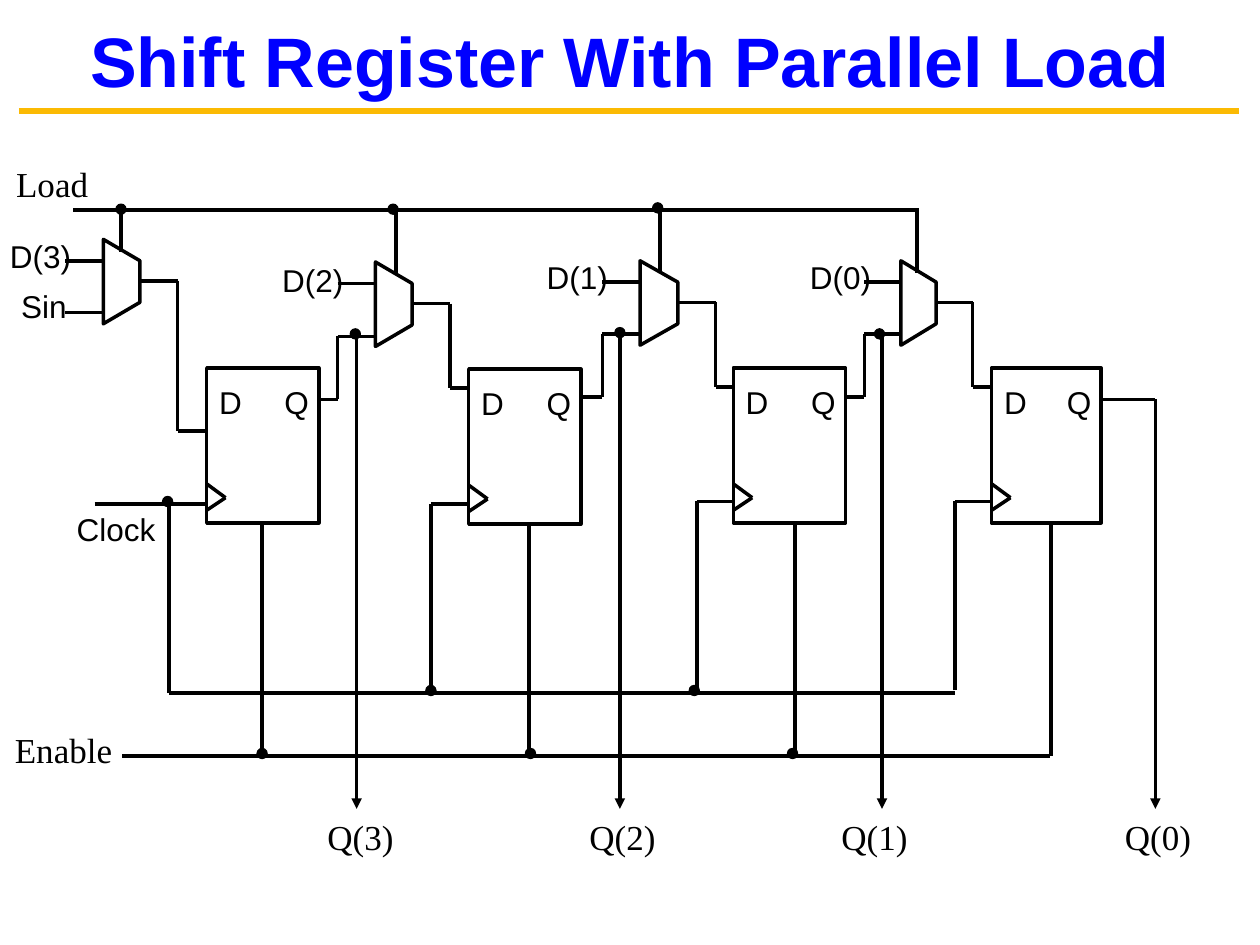
from lxml import etree
from pptx import Presentation
from pptx.dml.color import RGBColor
from pptx.enum import shapes, text
from pptx.oxml.ns import qn
from pptx.util import Pt

PX = 9144  # 100 px to the inch
BLACK, BLUE, GOLD = "000000", "0000FF", "FBBA03"
SANS, SERIF = "Arial", "Times New Roman"
THIN, THICK = 2, 2.25

# One dict per stage: multiplexer, flip-flop, and the wires around them
STAGES = [
    dict(mux=(82, 190, 29), flop=(164, 292, 89), bend=(141, 342), inlet=52,
         clock=(134, 400, 550), enable=208, load=96, name="D(3)", label=(-2, 183, 69)),
    dict(mux=(298, 208, 29), flop=(372, 293, 89), bend=(357, 308), inlet=268,
         clock=(342, 400, 550), enable=420, load=314, name="D(2)", label=(214, 202, 69)),
    dict(mux=(508, 207, 30), flop=(582, 292, 89), bend=(568, 307), inlet=478,
         clock=(553, 398, 548), enable=631, load=524, name="D(1)", label=(424, 200, 69)),
    dict(mux=(715, 207, 28), flop=(787, 292, 87), bend=(772, 307), inlet=686,
         clock=(758, 398, 548), enable=834, load=728, name="D(0)", label=(633, 200, 69)),
]
# Wires from each Q to the next multiplexer: start x, y, bend x, end x, end y
LINKS = [(253, 317, 268, 298, 267), (463, 315, 478, 508, 265),
         (671, 315, 686, 715, 265)]
# Long wires as lists of points
BUSES = [
    (THICK, [(58, 167), (729, 167)]),
    (THICK, [(75, 400), (134, 400)]),
    (THIN, [(134, 550), (758, 550)]),
    (THIN, [(97, 600), (833, 600)]),
    (THIN, [(52, 248), (82, 248)]),
    (THIN, [(875, 317), (917, 317)]),
]
# Outputs: name, arrow x, arrow top, label left
OUTS = [("Q(3)", 283, 267, 250), ("Q(2)", 492, 267, 458),
        ("Q(1)", 700, 267, 658), ("Q(0)", 917, 317, 883)]
LABELS = [("Load", 3, 124, 77, 43, 20, SERIF), ("Enable", 2, 573, 97, 43, 20, SERIF),
          ("Sin", 7, 223, 56, 40, 18, SANS), ("Clock", 51, 400, 83, 40, 18, SANS)]
DOTS = [(208, 598), (421, 598), (629, 598), (342, 548), (551, 548),
        (96, 166), (312, 166), (522, 165), (282, 265), (492, 264),
        (698, 265), (133, 398)]


def rgb(code):
    return RGBColor.from_string(code)


def box(*sides):
    return [side * PX for side in sides]


def style(shape, width, fill=None):
    shape.shadow.inherit = False
    shape.line.color.rgb = rgb(BLACK)
    shape.line.width = Pt(width)
    if fill:
        shape.fill.solid()
        shape.fill.fore_color.rgb = rgb(fill)
    else:
        shape.fill.background()


def wire(points, width=THIN, color=BLACK, arrow=False):
    for start, end in zip(points, points[1:]):
        line = pen.add_connector(shapes.MSO_CONNECTOR.STRAIGHT, *box(*start, *end))
        line.line.color.rgb = rgb(color)
        line.line.width = Pt(width)
        if arrow:
            etree.SubElement(line.line._get_or_add_ln(), qn("a:tailEnd"), type="triangle")
        etree.SubElement(line._element.spPr, qn("a:effectLst"))


def letter(run, size, face, color=BLACK, bold=False):
    for key, value in dict(size=Pt(size), name=face, bold=bold).items():
        setattr(run.font, key, value)
    run.font.color.rgb = rgb(color)


def label(words, x, y, w, h=40, size=18, face=SANS):
    frame = pen.add_textbox(*box(x, y, w, h)).text_frame
    frame.word_wrap = False
    frame.auto_size = text.MSO_AUTO_SIZE.SHAPE_TO_FIT_TEXT
    run = frame.paragraphs[0].add_run()
    run.text = words
    letter(run, size, face)


def flop(x, y, w):
    body = pen.add_shape(shapes.MSO_SHAPE.RECTANGLE, *box(x, y, w, 123))
    style(body, THIN)
    label("D", x, y + 7, 38)
    label("Q", x + w - 37, y + 7, 40)
    wire([(x, y + 92), (x + 15, y + 103), (x, y + 113)])


def mux(x, y, w):
    form = pen.build_freeform(x, y + 67, scale=PX)
    form.add_line_segments([(x + w, y + 50), (x + w, y + 17), (x, y)], close=True)
    style(form.convert_to_shape(), THIN)


def stage(part):
    x, y, w = part["mux"]
    side, top, _ = part["flop"]
    bend, drop = part["bend"]
    left, tick, base = part["clock"]
    mux(x, y, w)
    flop(*part["flop"])
    label(part["name"], *part["label"])
    wire([(part["inlet"], y + 17), (x, y + 17)])
    wire([(x + w, y + 33), (bend, y + 33), (bend, drop), (side, drop)])
    wire([(left, base), (left, tick), (side, tick)])
    wire([(part["enable"], top + 124), (part["enable"], 600)], THICK)
    wire([(part["load"], 167), (part["load"], y + 10)], THICK)


deck = Presentation()
deck.slide_width, deck.slide_height = box(1000, 750)
slide = deck.slides.add_slide(deck.slide_layouts[5])
pen = slide.shapes

# Title and its rule
title = pen.title
title.left, title.top, title.width, title.height = box(19, 14, 962, 67)
title.text_frame.text = "Shift Register With Parallel Load"
title.text_frame.vertical_anchor = text.MSO_ANCHOR.MIDDLE
head = title.text_frame.paragraphs[0]
head.alignment = text.PP_ALIGN.CENTER
letter(head.runs[0], 40, SANS, BLUE, True)
wire([(15, 88), (983, 88)], 3.75, GOLD)

# Circuit
for part in STAGES:
    stage(part)
for x, y, bend, end, low in LINKS:
    wire([(x, y), (bend, y), (bend, low), (end, low)])
for width, points in BUSES:
    wire(points, width)

# Outputs and free labels
for name, x, top, left in OUTS:
    wire([(x, top), (x, 642)], arrow=True)
    label(name, left, 642, 73, 43, 20, SERIF)
for item in LABELS:
    label(*item)

# Junctions
for x, y in DOTS:
    style(pen.add_shape(shapes.MSO_SHAPE.OVAL, *box(x - 4, y - 4, 8, 8)), 0.75, BLACK)

deck.save("out.pptx")
